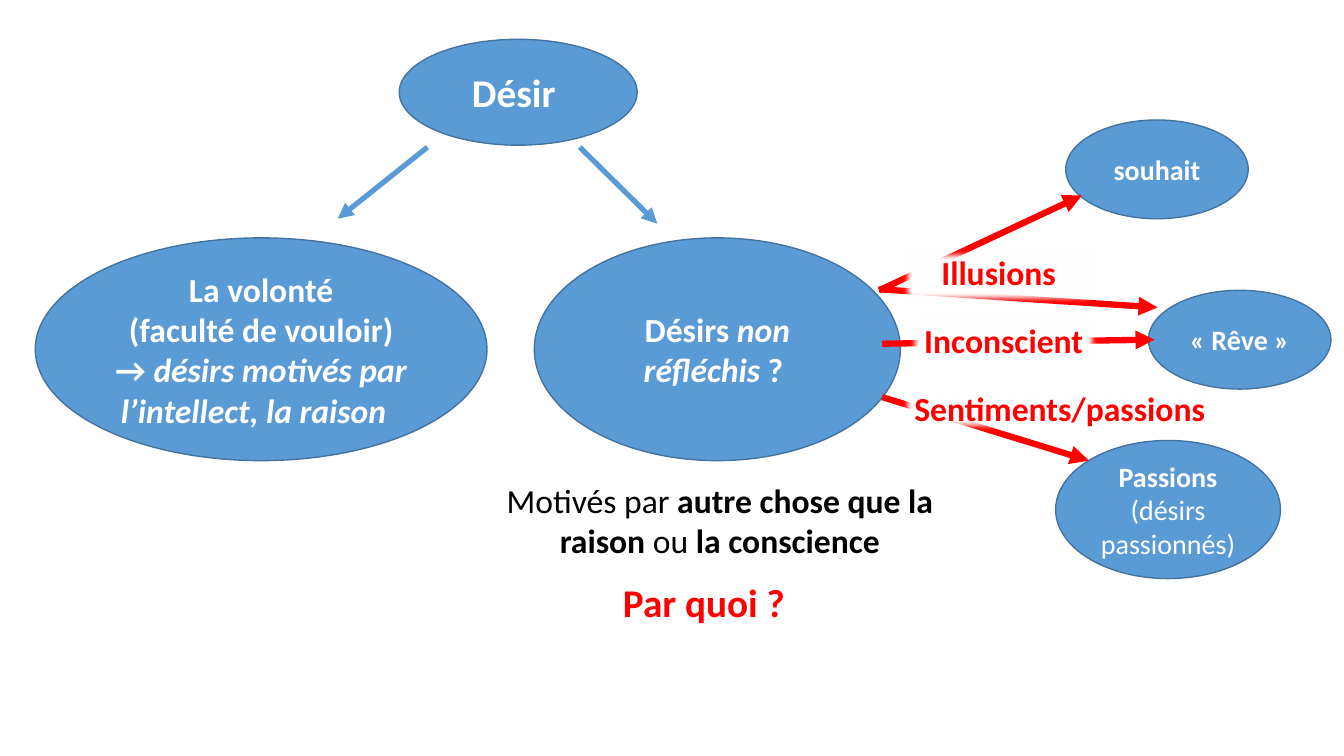
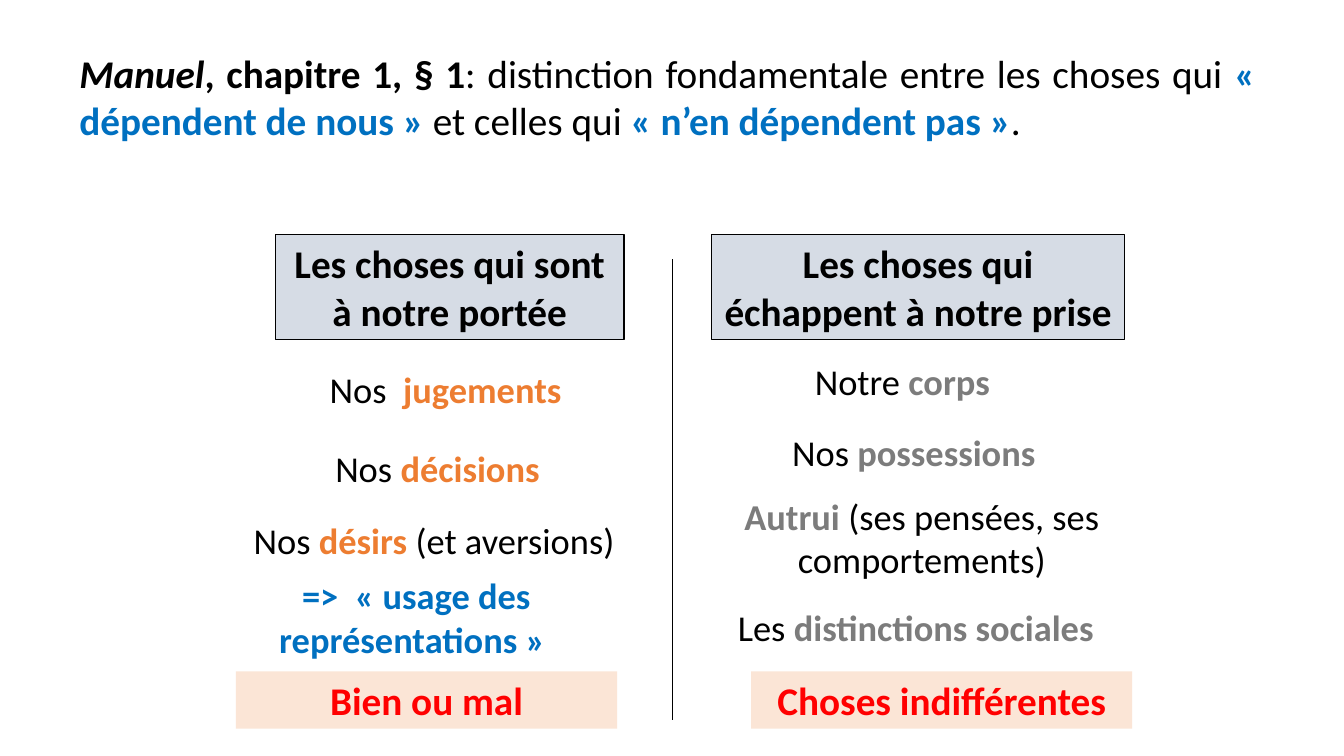
from lxml import etree
from pptx import Presentation
from pptx.dml.color import RGBColor
from pptx.enum.shapes import MSO_CONNECTOR, MSO_SHAPE
from pptx.enum.text import MSO_ANCHOR, PP_ALIGN
from pptx.oxml.ns import qn
from pptx.util import Emu, Pt

OVAL = MSO_SHAPE.OVAL
STRAIGHT = MSO_CONNECTOR.STRAIGHT
LEFT, CENTER, JUSTIFY = PP_ALIGN.LEFT, PP_ALIGN.CENTER, PP_ALIGN.JUSTIFY
TOP, MIDDLE = MSO_ANCHOR.TOP, MSO_ANCHOR.MIDDLE

EMU_PER_PX = 9144  # 100 px to the inch
FONT = "Calibri"
WHITE, BLACK, RED = "FFFFFF", "000000", "FF0000"
BLUE, DARK_BLUE, STRONG_BLUE = "5B9BD5", "43739E", "0070C0"
ORANGE, GREY = "ED7D31", "7C7C7C"
HEADING_FILL, VERDICT_FILL = "D6DCE5", "FBE5D6"
SOFT_EDGE = 7


def px(length):
    return Emu(length * EMU_PER_PX)


def color(hex_string):
    return RGBColor.from_string(hex_string)


# Text: a paragraph is a list of (text, style, colour) runs; style holds "b" and/or "i"
def write(text_frame, paragraphs, size, align=CENTER, anchor=TOP):
    text_frame.word_wrap = True
    text_frame.vertical_anchor = anchor
    for index, runs in enumerate(paragraphs):
        paragraph = text_frame.add_paragraph() if index else text_frame.paragraphs[0]
        paragraph.alignment = align
        for text, style, hex_string in runs:
            run = paragraph.add_run()
            run.text = text
            run.font.name = FONT
            run.font.size = Pt(size)
            run.font.bold = "b" in style
            run.font.italic = "i" in style
            run.font.color.rgb = color(hex_string)


def add_text(slide, box, runs, size, align=CENTER, fill=None, line=None):
    shape = slide.shapes.add_textbox(*map(px, box))
    if fill:
        shape.fill.solid()
        shape.fill.fore_color.rgb = color(fill)
    if line:
        shape.line.color.rgb = color(line)
        shape.line.width = Pt(0.75)
    write(shape.text_frame, [runs], size, align)
    return shape


def add_ellipse(slide, box, paragraphs, size):
    shape = slide.shapes.add_shape(OVAL, *map(px, box))
    shape.shadow.inherit = False
    shape.fill.solid()
    shape.fill.fore_color.rgb = color(BLUE)
    shape.line.color.rgb = color(DARK_BLUE)
    shape.line.width = Pt(1)
    write(shape.text_frame, paragraphs, size, anchor=MIDDLE)


def add_line(slide, ends, hex_string, width, arrow=False):
    connector = slide.shapes.add_connector(STRAIGHT, *map(px, ends))
    connector.line.color.rgb = color(hex_string)
    connector.line.width = Pt(width)
    if arrow:
        etree.SubElement(connector.line._get_or_add_ln(), qn("a:tailEnd"), type="triangle")
    etree.SubElement(connector._element.spPr, qn("a:effectLst"))


# White label with blurred edges, laid over an arrow
def add_label(slide, box, text):
    shape = add_text(slide, box, [(text, "b", RED)], 24, fill=WHITE)
    effects = etree.SubElement(shape._element.spPr, qn("a:effectLst"))
    etree.SubElement(effects, qn("a:softEdge"), rad=str(px(SOFT_EDGE)))


def build_desire_map(slide):
    # Kinds of desire
    ellipses = [
        ((396, 39, 236, 105), 28, [[("Désir ", "b", WHITE)]]),
        ((35, 236, 448, 221), 24, [
            [("La volonté", "b", WHITE)],
            [("(faculté de vouloir)", "b", WHITE)],
            [("→ ", "b", WHITE), ("désirs motivés par l’intellect, la raison  ", "bi", WHITE)],
        ]),
        ((530, 236, 363, 221), 24, [
            [("Désirs ", "b", WHITE), ("non réfléchis ", "bi", WHITE), ("? ", "b", WHITE)],
        ]),
        ((1047, 437, 223, 137), 20, [
            [("Passions ", "b", WHITE), ("(désirs passionnés)", "", WHITE)],
        ]),
        ((1139, 288, 181, 98), 20, [[("« Rêve »", "b", WHITE)]]),
        ((1057, 119, 181, 98), 20, [[("souhait", "b", WHITE)]]),
    ]
    for box, size, paragraphs in ellipses:
        add_ellipse(slide, box, paragraphs, size)

    # Arrows from desire to its two kinds, then on to the examples
    for ends in [(424, 146, 335, 217), (575, 146, 652, 222)]:
        add_line(slide, ends, BLUE, 3.75, arrow=True)
    for ends in [(872, 287, 1148, 305), (875, 394, 1080, 457),
                 (875, 341, 1145, 337), (872, 288, 1073, 194)]:
        add_line(slide, ends, RED, 4.5, arrow=True)

    # Causes written over the arrows
    add_label(slide, (899, 312, 193, 50), "Inconscient")
    add_label(slide, (892, 380, 318, 50), "Sentiments/passions")
    add_label(slide, (892, 245, 197, 59), "Illusions")

    # Question under the diagram
    add_text(slide, (483, 471, 462, 91), [
        ("Motivés par ", "", BLACK), ("autre chose que la raison", "b", BLACK),
        (" ou ", "", BLACK), ("la conscience", "b", BLACK),
    ], 24)
    add_text(slide, (575, 569, 255, 57), [("Par quoi ? ", "b", RED)], 28)


def build_distinction(slide):
    # Opening sentence
    add_text(slide, (69, 44, 1186, 151), [
        ("Manuel", "bi", BLACK), (", chapitre 1, § 1", "b", BLACK),
        (": distinction fondamentale entre les choses qui ", "", BLACK),
        ("« dépendent de nous » ", "b", STRONG_BLUE), ("et celles qui ", "", BLACK),
        ("« n’en dépendent pas »", "b", STRONG_BLUE), (".", "", BLACK),
    ], 28, JUSTIFY)

    # Column headings and verdicts
    for left, width, text in [(273, 346, "Les choses qui sont à notre portée"),
                              (706, 409, "Les choses qui échappent à notre prise")]:
        add_text(slide, (left, 233, width, 104), [(text, "b", BLACK)], 28,
                 fill=HEADING_FILL, line=BLACK)
    for left, text in [(234, "Bien ou mal"), (745, "Choses indifférentes")]:
        add_text(slide, (left, 666, 378, 57), [(text, "b", RED)], 28, fill=VERDICT_FILL)

    # Column entries
    entries = [
        ((249, 359, 386, 54), CENTER, [("Nos  ", "", BLACK), ("jugements", "b", ORANGE)]),
        ((312, 438, 244, 54), CENTER, [("Nos ", "", BLACK), ("décisions", "b", ORANGE)]),
        ((218, 509, 425, 54), CENTER, [
            ("Nos ", "", BLACK), ("désirs", "b", ORANGE), (" (et aversions)", "", BLACK)]),
        ((167, 564, 484, 98), CENTER, [
            (" ", "", BLACK), ("=>  « usage des représentations »", "b", STRONG_BLUE)]),
        ((722, 351, 346, 54), CENTER, [("Notre ", "", BLACK), ("corps", "b", GREY)]),
        ((761, 422, 299, 54), CENTER, [("Nos ", "", BLACK), ("possessions ", "b", GREY)]),
        ((698, 485, 433, 98), CENTER, [
            ("Autrui", "b", GREY), (" (ses pensées, ses comportements)", "", BLACK)]),
        ((722, 595, 386, 54), LEFT, [
            ("Les ", "", BLACK), ("distinctions sociales", "b", GREY)]),
    ]
    for box, align, runs in entries:
        add_text(slide, box, runs, 26, align)

    # Divider between the columns
    add_line(slide, (667, 257, 667, 714), BLACK, 0.5)


def main():
    presentation = Presentation()
    presentation.slide_width = px(1333)
    presentation.slide_height = px(750)
    blank_layout = presentation.slide_layouts[6]
    for build in (build_desire_map, build_distinction):
        build(presentation.slides.add_slide(blank_layout))
    presentation.save("out.pptx")


if __name__ == "__main__":
    main()
